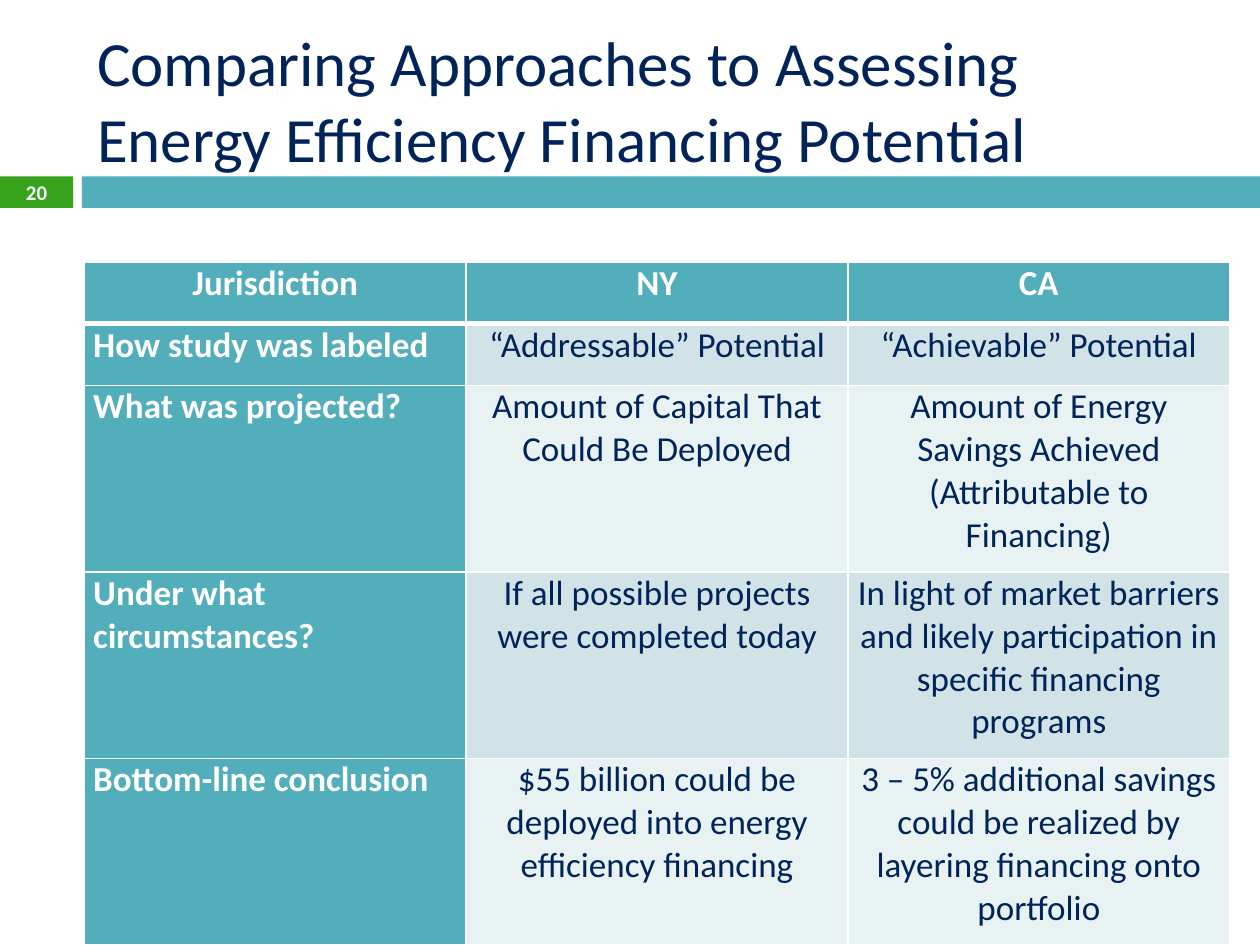
from lxml.etree import SubElement
from pptx import Presentation
from pptx.dml.color import RGBColor
from pptx.enum.shapes import MSO_SHAPE as Shape
from pptx.enum.text import MSO_ANCHOR as Anchor, PP_ALIGN as Align
from pptx.oxml.ns import qn
from pptx.util import Inches, Pt

# Content
TITLE = "Comparing Approaches to Assessing Energy Efficiency Financing Potential"
NUMBER = "20"
ROWS = [
    ("Jurisdiction", "NY", "CA"),
    ("How study was labeled", "“Addressable” Potential", "“Achievable” Potential"),
    ("What was projected?", "Amount of Capital That Could Be Deployed",
     "Amount of Energy Savings Achieved\n(Attributable to Financing)"),
    ("Under what circumstances?", "If all possible projects were completed today",
     "In light of market barriers and likely participation in specific financing programs"),
    ("Bottom-line conclusion",
     "$55 billion could be deployed into energy efficiency financing",
     "3 – 5% additional savings could be realized by layering financing onto portfolio"),
]

# Format values
NAVY, TEAL, GREEN, WHITE = "00245A", "52AEBA", "37A31D", "FFFFFF"
BANDS = ("E9F2F3", "D1E3E7")
HEIGHTS = (0.49, 0.49, 1.48, 1.48, 1.48)
WIDTH = 3.03
FRAME = {"vertical_anchor": Anchor.MIDDLE, "word_wrap": True}
CELL = {"margin_left": Inches(0.07), "margin_right": Inches(0.07),
        "margin_top": 0, "margin_bottom": 0, "vertical_anchor": Anchor.TOP}


def apply(item, values):
    for name, value in values.items():
        setattr(item, name, value)


def paint(fill, color):
    fill.solid()
    fill.fore_color.rgb = RGBColor.from_string(color)


def write(frame, text, size, color, bold=False, align=Align.LEFT):
    frame.text = text
    for para in frame.paragraphs:
        para.alignment = align
        for run in para.runs:
            apply(run.font, {"name": "Calibri", "size": Pt(size), "bold": bold})
            paint(run.font.fill, color)


def edge(cell, side, width):
    line = SubElement(cell._tc.get_or_add_tcPr(), qn("a:ln" + side), w=str(Pt(width)))
    SubElement(SubElement(line, qn("a:solidFill")), qn("a:srgbClr"), val=WHITE)


deck = Presentation()
deck.slide_width, deck.slide_height = Inches(10), Inches(7.5)
slide = deck.slides.add_slide(deck.slide_layouts[5])
shapes = slide.shapes

# Bars under the title
for left, width, color in ((0, 0.58, GREEN), (0.65, 9.35, TEAL)):
    bar = shapes.add_shape(Shape.RECTANGLE, Inches(left), Inches(1.4),
                           Inches(width), Inches(0.25))
    bar.shadow.inherit = False
    paint(bar.fill, color)
    bar.line.fill.background()

# Title
title = shapes.title
apply(title, {"left": Inches(0.67), "top": Inches(0.25),
              "width": Inches(8.92), "height": Inches(1.08)})
apply(title.text_frame, FRAME)
write(title.text_frame, TITLE, 36, NAVY)

# Slide number
num = shapes.add_textbox(0, Inches(1.39), Inches(0.58), Inches(0.27)).text_frame
apply(num, FRAME)
write(num, NUMBER, 11.9, WHITE, True, Align.CENTER)

# Comparison table
table = shapes.add_table(len(ROWS), len(ROWS[0]), Inches(0.67), Inches(2.08),
                         Inches(WIDTH * len(ROWS[0])), Inches(sum(HEIGHTS))).table
for col in table.columns:
    col.width = Inches(WIDTH)
for r, texts in enumerate(ROWS):
    table.rows[r].height = Inches(HEIGHTS[r])
    for c, text in enumerate(texts):
        cell = table.cell(r, c)
        head = r == 0 or c == 0
        apply(cell, CELL)
        for side in "LRTB":
            thick = (r, side) in ((0, "B"), (1, "T"))
            edge(cell, side, 3 if thick else 1)
        paint(cell.fill, TEAL if head else BANDS[r % 2])
        write(cell.text_frame, text, 20, WHITE if head else NAVY, head,
              Align.LEFT if c == 0 and r else Align.CENTER)

deck.save("out.pptx")
